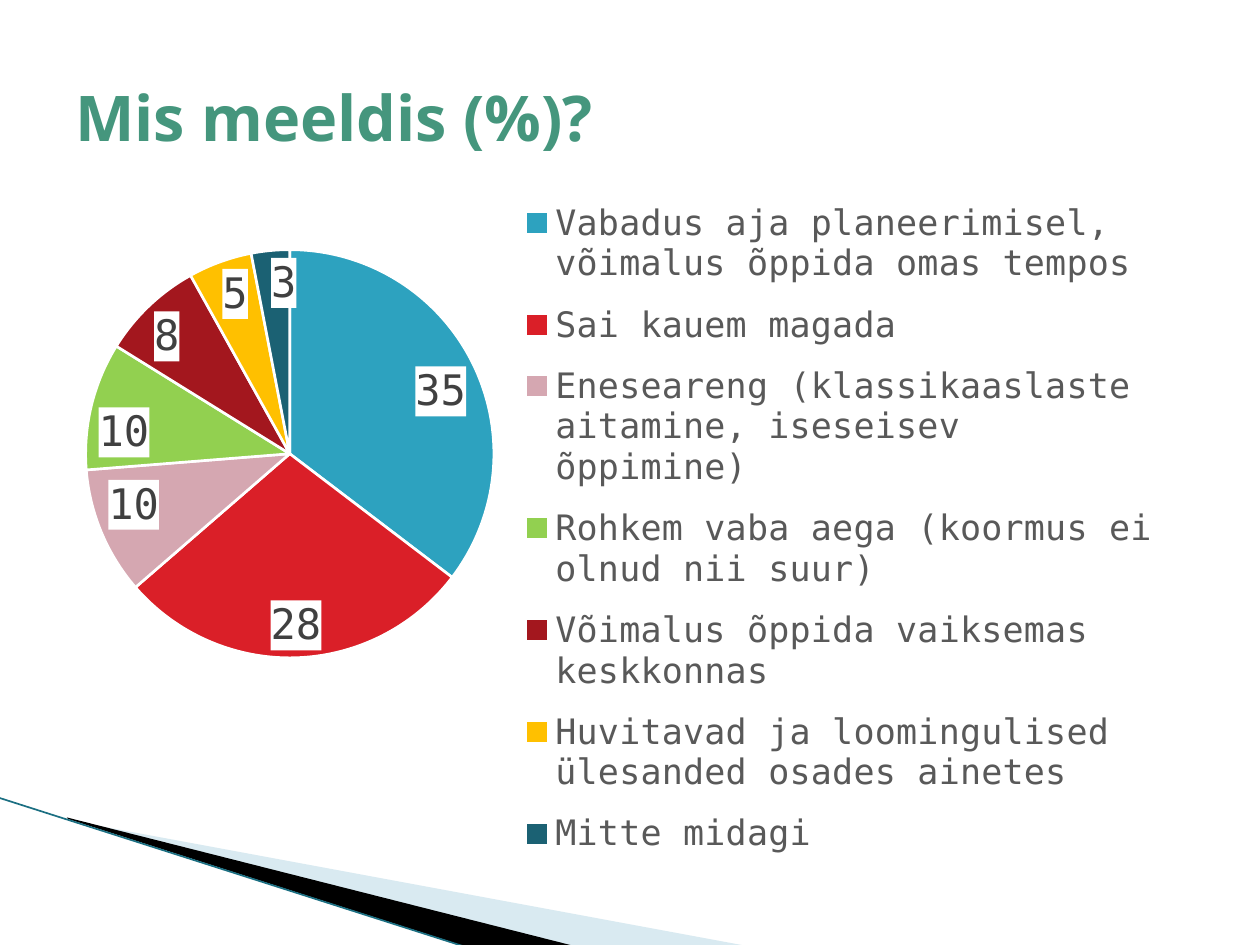
"""Build a slide with a pie chart of what pupils liked, in percent."""
from lxml.etree import SubElement
from pptx import Presentation
from pptx.chart.data import CategoryChartData
from pptx.dml.color import RGBColor
from pptx.enum.chart import XL_CHART_TYPE, XL_LABEL_POSITION, XL_LEGEND_POSITION
from pptx.enum.shapes import MSO_CONNECTOR
from pptx.enum.text import MSO_ANCHOR
from pptx.oxml import parse_xml
from pptx.oxml.ns import nsdecls, qn
from pptx.util import Cm, Pt

WHITE = RGBColor(0xFF, 0xFF, 0xFF)
BLACK = RGBColor(0x00, 0x00, 0x00)
PALE_BLUE = RGBColor(0xA0, 0xCB, 0xDC)
EDGE_TEAL = RGBColor(0x1B, 0x6F, 0x82)
TITLE_GREEN = RGBColor(0x45, 0x96, 0x7D)
LABEL_GRAY = RGBColor(0x40, 0x40, 0x40)
LEGEND_GRAY = RGBColor(0x59, 0x59, 0x59)
CHART_FONT = "DejaVu Sans Mono"

ANSWERS = [
    ("Vabadus aja planeerimisel, võimalus õppida omas tempos", 35, RGBColor(0x2D, 0xA2, 0xBF)),
    ("Sai kauem magada", 28, RGBColor(0xDA, 0x1F, 0x28)),
    ("Eneseareng (klassikaaslaste aitamine, iseseisev õppimine)", 10, RGBColor(0xD5, 0xA7, 0xB1)),
    ("Rohkem vaba aega (koormus ei olnud nii suur)", 10, RGBColor(0x92, 0xD0, 0x50)),
    ("Võimalus õppida vaiksemas keskkonnas", 8, RGBColor(0xA3, 0x17, 0x1E)),
    ("Huvitavad ja loomingulised ülesanded osades ainetes", 5, RGBColor(0xFF, 0xC0, 0x00)),
    ("Mitte midagi", 3, RGBColor(0x1B, 0x61, 0x73)),
]
WEDGES = [
    (PALE_BLUE, 40, [(1.4, 16.54), (15.11, 19.08), (11.58, 19.08), (1.4, 16.51)]),
    (BLACK, 100, [(1.35, 16.48), (11.61, 19.08), (9.45, 19.1), (1.37, 16.51)]),
]


def make_layout(bounds, inner=False):
    target = '<c:layoutTarget val="inner"/>' if inner else ""
    modes = '<c:xMode val="edge"/><c:yMode val="edge"/>'
    sizes = "".join(f'<c:{key} val="{value}"/>' for key, value in zip("xywh", bounds))
    return parse_xml(
        f"<c:layout {nsdecls('c')}><c:manualLayout>{target}{modes}{sizes}"
        "</c:manualLayout></c:layout>"
    )


def style_font(font, name, size, color):
    font.name = name
    font.size = Pt(size)
    font.color.rgb = color


presentation = Presentation()
presentation.slide_width = Cm(25.4)
presentation.slide_height = Cm(19.05)
slide = presentation.slides.add_slide(presentation.slide_layouts[6])

for color, opacity, corners in WEDGES:
    points = [(Cm(x), Cm(y)) for x, y in corners]
    builder = slide.shapes.build_freeform(*points[0])
    builder.add_line_segments(points[1:])
    wedge = builder.convert_to_shape()
    wedge.shadow.inherit = False
    wedge.fill.solid()
    wedge.fill.fore_color.rgb = color
    wedge.line.fill.background()
    if opacity < 100:
        color_element = wedge.fill._xPr.find(qn("a:solidFill"))[0]
        SubElement(color_element, qn("a:alpha")).set("val", str(opacity * 1000))

edge = slide.shapes.add_connector(
    MSO_CONNECTOR.STRAIGHT, Cm(-0.03), Cm(16.08), Cm(9.42), Cm(19.1)
)
edge.line.color.rgb = EDGE_TEAL
edge.line.width = Pt(0.95)
SubElement(edge._element.spPr, qn("a:effectLst"))

chart_data = CategoryChartData()
chart_data.categories = [answer for answer, share, color in ANSWERS]
chart_data.add_series("Series 1", [share for answer, share, color in ANSWERS])
chart = slide.shapes.add_chart(
    XL_CHART_TYPE.PIE, Cm(1.27), Cm(2.92), Cm(22.86), Cm(15.01), chart_data
).chart
chart.has_title = False
style_font(chart.font, CHART_FONT, 10, BLACK)

chart.has_legend = True
legend = chart.legend
legend.position = XL_LEGEND_POSITION.RIGHT
legend.include_in_layout = False
style_font(legend.font, CHART_FONT, 20, LEGEND_GRAY)
legend._element.find(qn("c:legendPos")).addnext(make_layout((0.4, 0.05, 0.57, 0.93)))

plot_area = chart._chartSpace.chart.plotArea
for layout in plot_area.findall(qn("c:layout")):
    plot_area.remove(layout)
plot_area.insert(0, make_layout((0.02, 0.1, 0.36, 0.63), inner=True))

plot = chart.plots[0]
plot.vary_by_categories = True
series = plot.series[0]
for index, (answer, share, color) in enumerate(ANSWERS):
    slice_format = series.points[index].format
    slice_format.fill.solid()
    slice_format.fill.fore_color.rgb = color
    slice_format.line.color.rgb = WHITE
    slice_format.line.width = Pt(1.5)

labels = series.data_labels
labels.show_value = True
labels.show_percentage = False
labels.show_legend_key = False
labels.position = XL_LABEL_POSITION.INSIDE_END
style_font(labels.font, CHART_FONT, 24, LABEL_GRAY)
labels._element.find(qn("c:txPr")).addprevious(parse_xml(
    f"<c:spPr {nsdecls('c', 'a')}><a:solidFill>"
    f'<a:srgbClr val="{WHITE}"/></a:solidFill></c:spPr>'
))

title = slide.shapes.add_textbox(Cm(1.27), Cm(0.76), Cm(22.86), Cm(3.18))
title.text_frame.word_wrap = True
title.text_frame.vertical_anchor = MSO_ANCHOR.MIDDLE
run = title.text_frame.paragraphs[0].add_run()
run.text = "Mis meeldis (%)?"
style_font(run.font, "Open Sans", 36, TITLE_GREEN)
run.font.bold = True

presentation.save("out.pptx")
